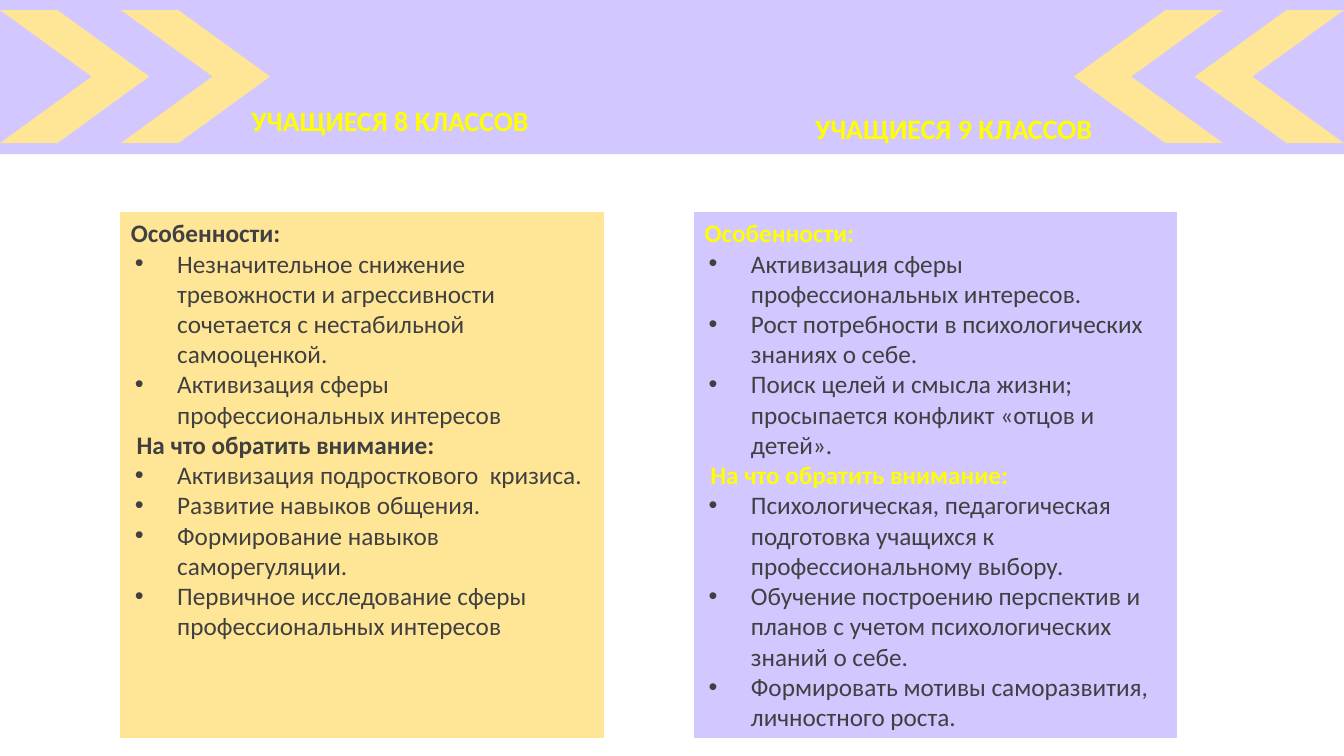
from dataclasses import dataclass

from lxml import etree
from pptx import Presentation
from pptx import util as u
from pptx.dml.color import RGBColor
from pptx.enum import shapes, text
from pptx.oxml import ns


@dataclass(frozen=True)
class Theme:
    """Colours, font and type sizes of the slide."""
    violet: str = "B6A4FF"
    lilac: str = "D2C7FF"
    sand: str = "FFE697"
    yellow: str = "FFFF00"
    ink: str = "404040"
    font: str = "Calibri"
    title: int = 20
    body: int = 18


class Deck:
    """Draws elements on one slide, placed in percent of its width and height."""

    def __init__(self, prs, theme):
        self.prs, self.t = prs, theme
        self.s = prs.slides.add_slide(prs.slide_layouts[6])

    def box(self, x, y, w, h):
        """Turn percentages into slide lengths."""
        width, height = self.prs.slide_width, self.prs.slide_height
        return [int(v * side / 100) for v, side in zip((x, y, w, h), (width, height) * 2)]

    def shape(self, kind, place, fill, line=None, alpha=None):
        """Add a flat preset shape."""
        sp = self.s.shapes.add_shape(kind, *self.box(*place))
        sp.shadow.inherit = False
        sp.fill.solid()
        sp.fill.fore_color.rgb = RGBColor.from_string(fill)
        if alpha:
            clr = sp.fill._xPr.find(".//" + ns.qn("a:srgbClr"))
            etree.SubElement(clr, ns.qn("a:alpha")).set("val", str(alpha * 1000))
        if line:
            sp.line.color.rgb = RGBColor.from_string(line)
            sp.line.width = u.Pt(1)
        else:
            sp.line.fill.background()
        return sp

    def chevron(self, place, flip=False):
        """Add a chevron pointing right, or left when flipped."""
        sp = self.shape(shapes.MSO_SHAPE.CHEVRON, place, self.t.sand)
        sp.adjustments[0] = 0.689
        if flip:
            sp._element.spPr.find(ns.qn("a:xfrm")).set("flipH", "1")

    def run(self, p, words, size, color, bold=False):
        """Add one styled run to a paragraph."""
        r = p.add_run()
        r.text = words
        r.font.name, r.font.size, r.font.bold = self.t.font, u.Pt(size), bold
        r.font.color.rgb = RGBColor.from_string(color)

    def title(self, place, words):
        """Add a centred column title."""
        tf = self.s.shapes.add_textbox(*self.box(*place)).text_frame
        tf.word_wrap = True
        tf.auto_size = text.MSO_AUTO_SIZE.SHAPE_TO_FIT_TEXT
        p = tf.paragraphs[0]
        p.alignment = text.PP_ALIGN.CENTER
        self.run(p, words, self.t.title, self.t.yellow, True)

    def bullet(self, p):
        """Give a paragraph a hanging bullet."""
        pPr = p._p.get_or_add_pPr()
        pPr.set("marL", str(u.Inches(0.46)))
        pPr.set("indent", str(u.Inches(-0.42)))
        etree.SubElement(pPr, ns.qn("a:buFont")).set("typeface", "Arial")
        etree.SubElement(pPr, ns.qn("a:buChar")).set("char", "•")

    def card(self, place, fill, heading_color, sections):
        """Add a filled card with headed bullet lists."""
        tf = self.shape(shapes.MSO_SHAPE.RECTANGLE, place, fill, fill).text_frame
        tf.word_wrap = True
        tf.vertical_anchor = text.MSO_ANCHOR.TOP
        lines = [(words, i == 0) for heading, items in sections
                 for i, words in enumerate([heading, *items])]
        for i, (words, is_heading) in enumerate(lines):
            p = tf.add_paragraph() if i else tf.paragraphs[0]
            p.alignment = text.PP_ALIGN.LEFT
            if not is_heading:
                self.bullet(p)
            self.run(p, words, self.t.body, heading_color if is_heading else self.t.ink, is_heading)


FEATURES, ATTENTION = "Особенности:", " На что обратить внимание:"
GRADE_8 = [
    (FEATURES, [
        "Незначительное снижение тревожности и агрессивности сочетается с нестабильной самооценкой.",
        "Активизация сферы профессиональных интересов",
    ]),
    (ATTENTION, [
        "Активизация подросткового  кризиса.",
        "Развитие навыков общения.",
        "Формирование навыков саморегуляции.",
        "Первичное исследование сферы профессиональных интересов",
    ]),
]
GRADE_9 = [
    (FEATURES, [
        "Активизация сферы профессиональных интересов.",
        "Рост потребности в психологических знаниях о себе.",
        "Поиск целей и смысла жизни; просыпается конфликт «отцов и детей».",
    ]),
    (ATTENTION, [
        "Психологическая, педагогическая подготовка учащихся к профессиональному выбору.",
        "Обучение построению перспектив и планов с учетом психологических знаний о себе.",
        "Формировать мотивы саморазвития, личностного роста.",
    ]),
]


def main():
    """Build the slide and save it."""
    prs = Presentation()
    prs.slide_width, prs.slide_height = u.Inches(13.33), u.Inches(7.5)
    t = Theme()
    d = Deck(prs, t)
    d.shape(shapes.MSO_SHAPE.RECTANGLE, (0, 0, 100, 20.4), t.violet, alpha=61)
    d.title((16.13, 13.07, 25.8, 5.87), "УЧАЩИЕСЯ 8 КЛАССОВ")
    chevron_w = 11.1
    for x in (9, 0):
        d.chevron((x, 1.33, chevron_w, 17.6))
        d.chevron((100 - chevron_w - x, 1.33, chevron_w, 17.6), flip=True)
    d.card((9, 28.13, 35.86, 69.47), t.sand, t.ink, GRADE_8)
    d.card((51.69, 28.13, 35.86, 69.47), t.lilac, t.yellow, GRADE_9)
    d.title((58.06, 14.13, 25.8, 5.87), "УЧАЩИЕСЯ 9 КЛАССОВ")
    prs.save("out.pptx")


if __name__ == "__main__":
    main()
